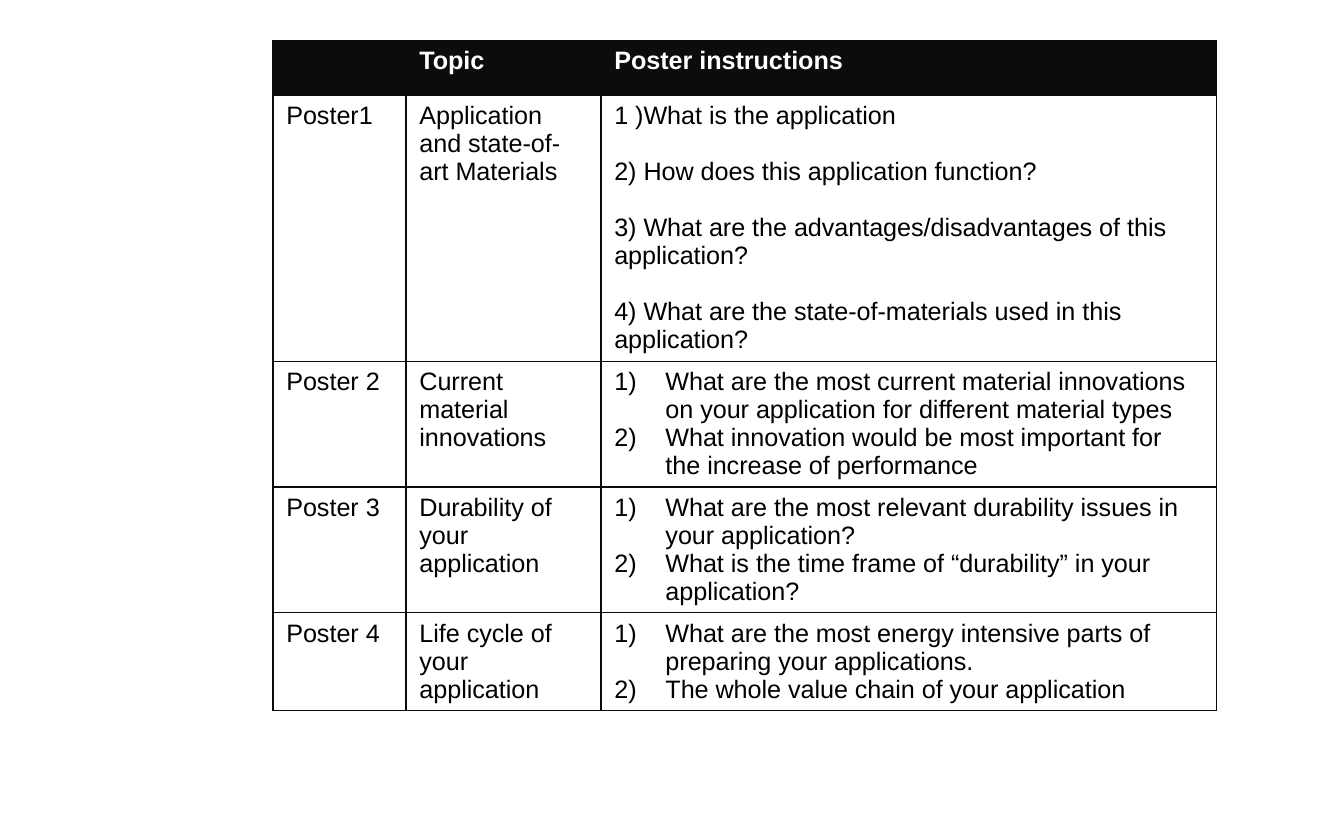
from lxml import etree
from pptx import Presentation
from pptx.dml.color import RGBColor
from pptx.oxml import ns
from pptx.util import Pt

COLORS = {"line": "0C0C0C", "header": "0C0C0C", "header_text": "FFFFFF",
          "text": "000000", "cell": "FFFFFF"}
COLUMN_WIDTHS = [71.3, 104.4, 329.8]
ROW_HEIGHTS = [29.5, 142.5, 67.2, 67.2, 52.2]
HEADER = ["", "Topic", "Poster instructions"]
POSTERS = [
    ("Poster1", "Application and state-of-art Materials",
     ["1 )What is the application",
      "2) How does this application function?",
      "3) What are the advantages/disadvantages of this application?",
      "4) What are the state-of-materials used in this application?"]),
    ("Poster 2", "Current material innovations",
     ["What are the most current material innovations on your application "
      "for different material types",
      "What innovation would be most important for the increase of performance"]),
    ("Poster 3", "Durability of your application",
     ["What are the most relevant durability issues in your application?",
      "What is the time frame of “durability” in your application?"]),
    ("Poster 4", "Life cycle of your application",
     ["What are the most energy intensive parts of preparing your applications.",
      "The whole value chain of your application"]),
]


def add_numbering(paragraph, indent=27.4):
    properties = paragraph._p.get_or_add_pPr()
    properties.set("marL", str(Pt(indent)))
    properties.set("indent", str(-Pt(indent)))
    number = etree.SubElement(properties, ns.qn("a:buAutoNum"))
    number.set("type", "arabicParenR")


def write_text(cell, lines, color="text", bold=False, numbered=False, gap=0):
    frame = cell.text_frame
    for index, line in enumerate(lines):
        paragraph = frame.add_paragraph() if index else frame.paragraphs[0]
        if numbered:
            add_numbering(paragraph)
        if index and gap:
            paragraph.space_before = Pt(gap)
        # An empty cell keeps its size through the paragraph format
        font = (paragraph.add_run() if line else paragraph).font
        if line:
            paragraph.runs[0].text = line
        font.name = "Arial"
        font.size = Pt(13.5)
        font.bold = bold
        font.color.rgb = RGBColor.from_string(COLORS[color])


def format_cell(cell, fill, horizontal_width):
    properties = cell._tc.get_or_add_tcPr()
    for side, width in (("L", 1), ("R", 1),
                        ("T", horizontal_width), ("B", horizontal_width)):
        line = etree.SubElement(properties, ns.qn(f"a:ln{side}"), w=str(Pt(width)))
        solid = etree.SubElement(line, ns.qn("a:solidFill"))
        etree.SubElement(solid, ns.qn("a:srgbClr"), val=COLORS["line"])
    cell.fill.solid()
    cell.fill.fore_color.rgb = RGBColor.from_string(COLORS[fill])


def add_poster_table(slide):
    table = slide.shapes.add_table(
        len(ROW_HEIGHTS), len(COLUMN_WIDTHS), Pt(146.2), Pt(21.6),
        Pt(sum(COLUMN_WIDTHS)), Pt(sum(ROW_HEIGHTS))).table
    table.horz_banding = False
    for column, width in zip(table.columns, COLUMN_WIDTHS):
        column.width = Pt(width)
    for row, height in zip(table.rows, ROW_HEIGHTS):
        row.height = Pt(height)

    # Header row
    for cell, heading in zip(table.rows[0].cells, HEADER):
        format_cell(cell, "header", 1)
        write_text(cell, [heading], color="header_text", bold=True)

    # Poster rows: odd rows have thinner horizontal lines
    for index, (poster, topic, instructions) in enumerate(POSTERS, 1):
        cells = list(table.rows[index].cells)
        for cell in cells:
            format_cell(cell, "cell", 0.5 if index % 2 else 1)
        write_text(cells[0], [poster])
        write_text(cells[1], [topic])
        # The first poster has typed numbers and spaced paragraphs
        write_text(cells[2], instructions, numbered=index > 1,
                   gap=15 if index == 1 else 0)


def main():
    presentation = Presentation()
    presentation.slide_width = Pt(720)
    presentation.slide_height = Pt(450)
    slide = presentation.slides.add_slide(presentation.slide_layouts[6])
    add_poster_table(slide)
    presentation.save("out.pptx")


if __name__ == "__main__":
    main()
